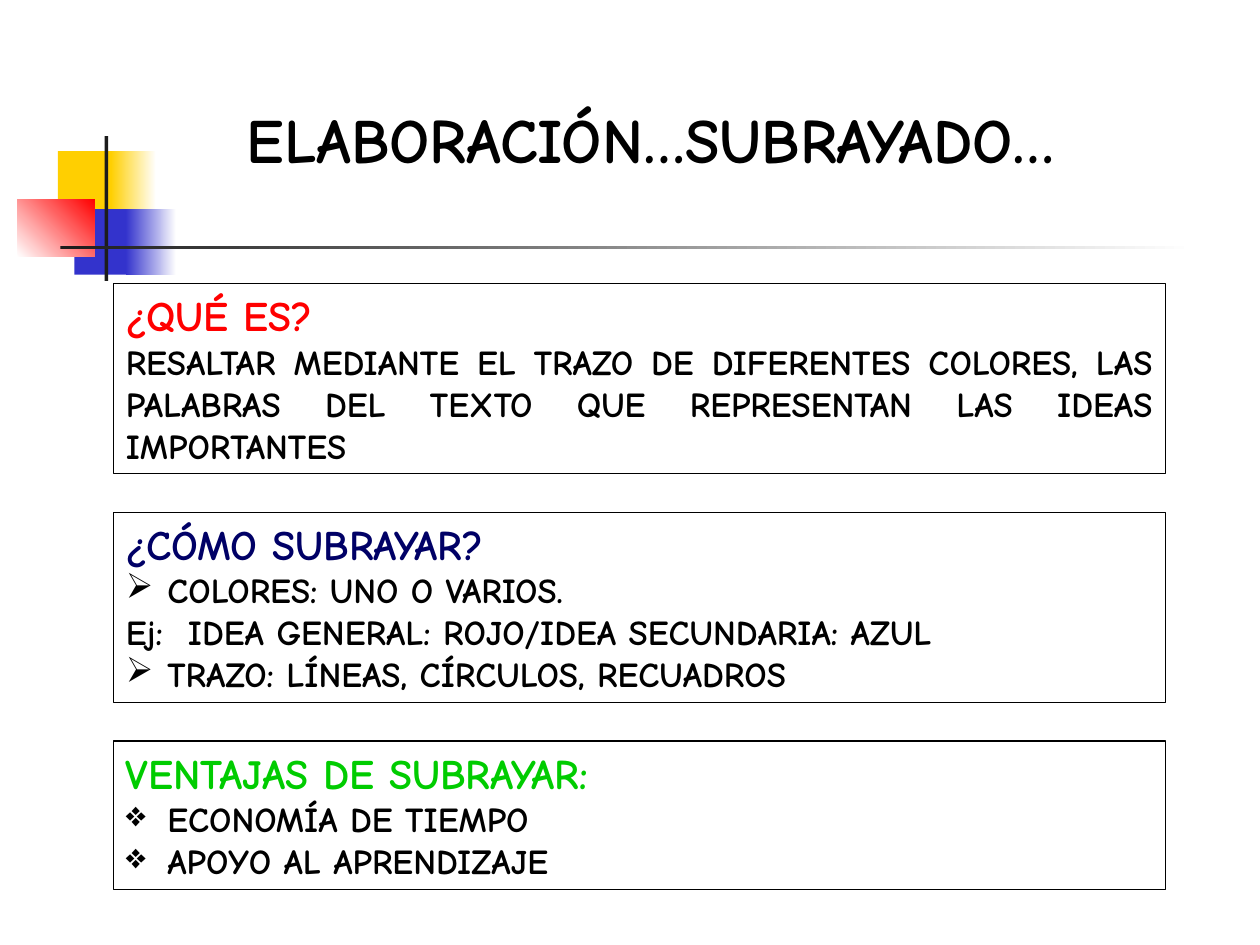
from lxml.etree import SubElement
from pptx import Presentation
from pptx.dml.color import RGBColor
from pptx.enum.shapes import MSO_SHAPE as Shape
from pptx.enum.text import MSO_ANCHOR as Anchor, MSO_AUTO_SIZE as AutoSize, PP_ALIGN as Align
from pptx.oxml.ns import qn
from pptx.util import Inches, Pt

FONT = "Comic Neue"
COLORS = {
    "black": "000000", "white": "FFFFFF", "ink": "1C1C1C",
    "yellow": "FFCF01", "blue": "3333CC", "red": "FF0000",
    "navy": "000066", "green": "00CC00",
}

# Panels share a left edge, a width and a vertical step
PANEL_LEFT, PANEL_TOP, PANEL_WIDTH, PANEL_STEP = 0.9, 2.25, 8.35, 1.815
HANGING = Inches(0.33)


def rgb(name):
    return RGBColor.from_string(COLORS[name])


def write(paragraph, text, size=20, color="black", align=Align.LEFT, bullet=None):
    """Fill a paragraph with bold text, optionally with a hanging bullet."""
    paragraph.alignment = align
    if bullet:
        props = paragraph._p.get_or_add_pPr()
        props.set("marL", str(HANGING))
        props.set("indent", str(-HANGING))
        SubElement(props, qn("a:buChar")).set("char", bullet)
    run = paragraph.add_run()
    run.text = text
    run.font.name = FONT
    run.font.size = Pt(size)
    run.font.bold = True
    run.font.color.rgb = rgb(color)


def add_box(slide, left, top, width, height):
    box = slide.shapes.add_shape(
        Shape.RECTANGLE, Inches(left), Inches(top), Inches(width), Inches(height))
    box.shadow.inherit = False
    return box


def add_block(slide, place, start, end=None, angle=0):
    """Add a borderless block, plain or fading from start to end."""
    block = add_box(slide, *place)
    block.line.fill.background()
    if end is None:
        block.fill.solid()
        block.fill.fore_color.rgb = rgb(start)
        return
    block.fill.gradient()
    block.fill.gradient_angle = angle
    for stop, position, color in zip(block.fill.gradient_stops, (0, 1), (start, end)):
        stop.position = position
        stop.color.rgb = rgb(color)


def add_ornament(slide):
    add_block(slide, (0.46, 1.2, 0.48, 0.52), "yellow")
    add_block(slide, (0.88, 1.2, 0.36, 0.52), "yellow", "white")
    add_block(slide, (0.59, 1.66, 0.46, 0.52), "blue")
    add_block(slide, (1, 1.66, 0.4, 0.52), "blue", "white")
    add_block(slide, (0.14, 1.58, 0.61, 0.46), "white", "red", angle=45)
    # Crossing bars
    add_block(slide, (0.83, 1.08, 0.03, 1.15), "ink")
    add_block(slide, (0.48, 1.95, 9, 0.03), "ink", "white")


def add_title(slide, text):
    title = slide.shapes.title
    title.left, title.top = Inches(1), Inches(0.75)
    title.width, title.height = Inches(8.33), Inches(0.7)
    title.text_frame.vertical_anchor = Anchor.MIDDLE
    write(title.text_frame.paragraphs[0], text, size=36, align=Align.CENTER)


def add_panel(slide, row, height, heading, color, lines):
    """Add an outlined panel: a coloured heading above its lines."""
    panel = add_box(slide, PANEL_LEFT, PANEL_TOP + row * PANEL_STEP, PANEL_WIDTH, height)
    panel.fill.background()
    panel.line.color.rgb = rgb("black")
    panel.line.width = Pt(0.75)
    frame = panel.text_frame
    frame.word_wrap = True
    frame.auto_size = AutoSize.SHAPE_TO_FIT_TEXT
    frame.vertical_anchor = Anchor.TOP
    write(frame.paragraphs[0], heading, size=24, color=color)
    for text, style in lines:
        write(frame.add_paragraph(), text, **style)


def main():
    prs = Presentation()
    prs.slide_width, prs.slide_height = Inches(10), Inches(7.5)
    slide = prs.slides.add_slide(prs.slide_layouts[5])

    add_ornament(slide)
    add_title(slide, "ELABORACIÓN…SUBRAYADO…")

    arrow, diamond = {"bullet": "➢"}, {"bullet": "❖"}
    add_panel(slide, 0, 1.51, "¿QUÉ ES?", "red", [
        ("RESALTAR MEDIANTE EL TRAZO DE DIFERENTES COLORES, LAS PALABRAS "
         "DEL TEXTO QUE REPRESENTAN LAS IDEAS IMPORTANTES", {"align": Align.JUSTIFY}),
    ])
    add_panel(slide, 1, 1.51, "¿CÓMO SUBRAYAR?", "navy", [
        ("COLORES: UNO O VARIOS.", arrow),
        ("Ej:  IDEA GENERAL: ROJO/IDEA SECUNDARIA: AZUL", {}),
        ("TRAZO: LÍNEAS, CÍRCULOS, RECUADROS", arrow),
    ])
    add_panel(slide, 2, 1.18, "VENTAJAS DE SUBRAYAR:", "green", [
        ("ECONOMÍA DE TIEMPO", diamond),
        ("APOYO AL APRENDIZAJE", diamond),
    ])

    prs.save("out.pptx")


if __name__ == "__main__":
    main()
